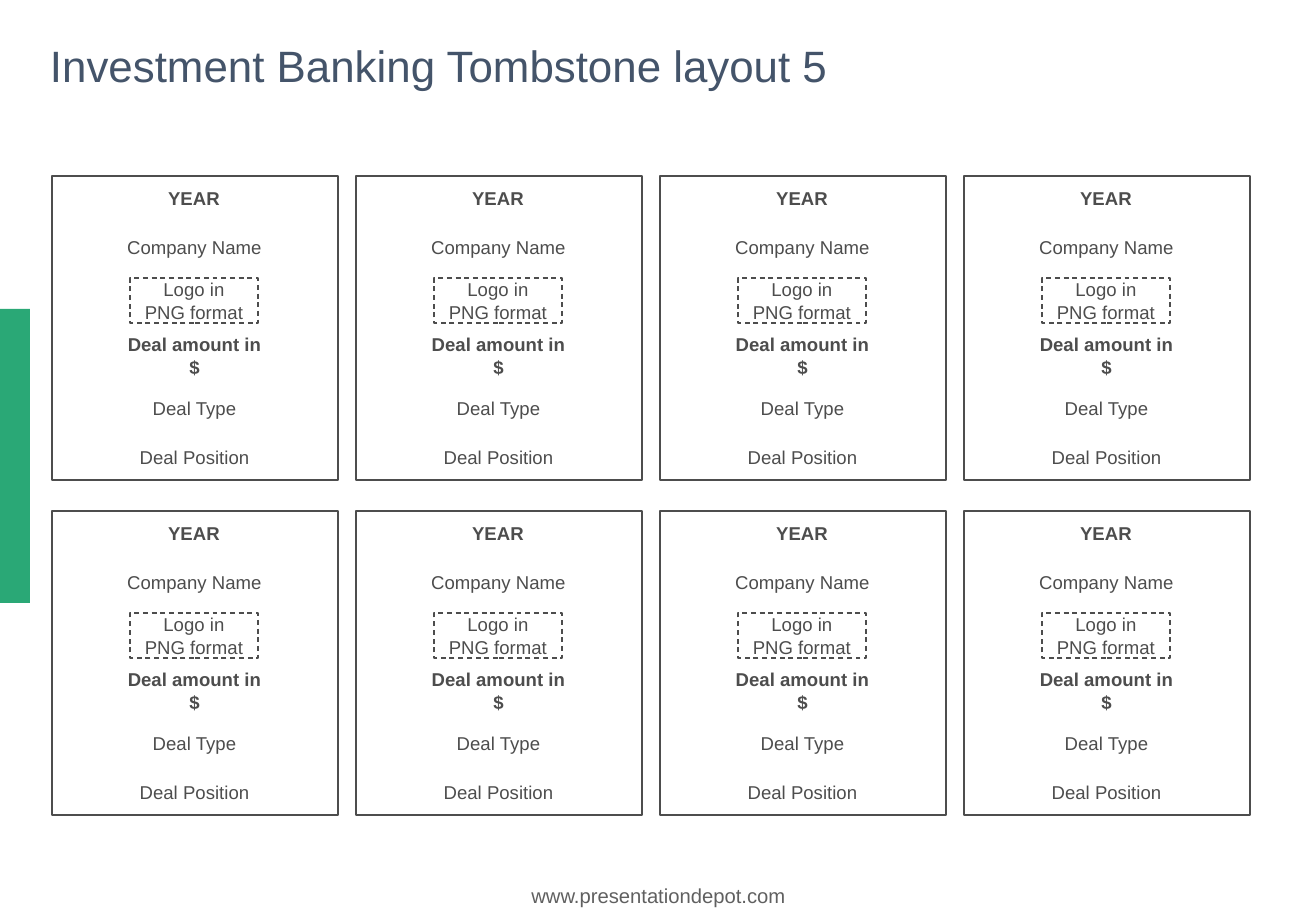
"""Build a slide with a grid of investment banking tombstones."""
import itertools
from dataclasses import dataclass

import pptx
import pptx.dml.color
import pptx.enum.dml
import pptx.enum.shapes
import pptx.enum.text
import pptx.shapes.base
import pptx.shapes.autoshape
import pptx.shapes.shapetree
import pptx.util

EMU_PER_PX = 7526
FONT = "Arial"
COLORS = {"title": "44546A", "card": "4D4D4D", "accent": "2AA876", "footer": "606060"}

COLUMNS, ROWS = 4, 2
CARD_LEFT, CARD_TOP = 52, 176
CARD_WIDTH, CARD_HEIGHT = 286, 304
COLUMN_STEP, ROW_STEP = 304, 335
CARD_AXIS = 142

ALIGN = pptx.enum.text.PP_ALIGN
AUTO_SIZE = pptx.enum.text.MSO_AUTO_SIZE


@dataclass(frozen=True)
class Box:
    left: int
    top: int
    width: int
    height: int

    def emu(self) -> list[int]:
        return [side * EMU_PER_PX for side in (self.left, self.top, self.width, self.height)]


@dataclass(frozen=True)
class DealLine:
    text: str
    top: int
    width: int
    height: int = 23
    bold: bool = False
    framed: bool = False


DEAL_LINES = (
    DealLine("YEAR", 11, 52, bold=True),
    DealLine("Company Name", 60, 135),
    DealLine("Logo in\vPNG format", 102, 128, height=45, framed=True),
    DealLine("Deal amount in $", 168, 149, bold=True),
    DealLine("Deal Type", 221, 85),
    DealLine("Deal Position", 270, 111),
)


def rgb(name: str) -> pptx.dml.color.RGBColor:
    return pptx.dml.color.RGBColor.from_string(COLORS[name])


def write(part: pptx.shapes.autoshape.Shape, text: str, size: int, color: str,
          align: ALIGN = ALIGN.CENTER, bold: bool = False, wrap: bool = True,
          auto_size: AUTO_SIZE = AUTO_SIZE.SHAPE_TO_FIT_TEXT) -> None:
    frame = part.text_frame
    frame.text = text
    frame.margin_left = frame.margin_top = frame.margin_right = frame.margin_bottom = 0
    frame.vertical_anchor = pptx.enum.text.MSO_ANCHOR.MIDDLE
    frame.word_wrap = wrap
    frame.auto_size = auto_size
    paragraph = frame.paragraphs[0]
    paragraph.alignment = align
    for run in paragraph.runs:
        run.font.name = FONT
        run.font.size = pptx.util.Pt(size)
        run.font.bold = bold
        run.font.color.rgb = rgb(color)


def add_rectangle(shapes: pptx.shapes.shapetree.GroupShapes, box: Box,
                  ) -> pptx.shapes.autoshape.Shape:
    rectangle = shapes.add_shape(pptx.enum.shapes.MSO_SHAPE.RECTANGLE, *box.emu())
    rectangle.shadow.inherit = False
    return rectangle


def add_frame(shapes: pptx.shapes.shapetree.GroupShapes, box: Box, weight: float,
              ) -> pptx.shapes.autoshape.Shape:
    frame = add_rectangle(shapes, box)
    frame.fill.background()
    frame.line.color.rgb = rgb("card")
    frame.line.width = pptx.util.Pt(weight)
    return frame


def add_tombstone(shapes: pptx.shapes.shapetree.SlideShapes, left: int, top: int) -> None:
    tombstone = shapes.add_group_shape().shapes
    add_frame(tombstone, Box(left, top, CARD_WIDTH, CARD_HEIGHT), 1.5)
    for line in DEAL_LINES:
        box = Box(left + CARD_AXIS - line.width // 2, top + line.top, line.width, line.height)
        if line.framed:
            entry = add_frame(tombstone, box, 0.75)
            entry.line.dash_style = pptx.enum.dml.MSO_LINE.DASH
        else:
            entry = tombstone.add_textbox(*box.emu())
        write(entry, line.text, 11, "card", bold=line.bold, wrap=line.framed)


def main() -> None:
    deck = pptx.Presentation()
    deck.slide_width = 1316 * EMU_PER_PX
    deck.slide_height = 911 * EMU_PER_PX
    shapes = deck.slides.add_slide(deck.slide_layouts[6]).shapes

    accent = add_rectangle(shapes, Box(0, 309, 30, 294))
    accent.fill.solid()
    accent.fill.fore_color.rgb = rgb("accent")
    accent.line.fill.background()

    title = shapes.add_textbox(*Box(50, 39, 1198, 53).emu())
    write(title, "Investment Banking Tombstone layout 5", 26, "title", align=ALIGN.LEFT)

    for row, column in itertools.product(range(ROWS), range(COLUMNS)):
        add_tombstone(shapes, CARD_LEFT + column * COLUMN_STEP, CARD_TOP + row * ROW_STEP)

    footer = shapes.add_textbox(*Box(413, 883, 491, 24).emu())
    write(footer, "www.presentationdepot.com", 12, "footer", auto_size=AUTO_SIZE.NONE)

    deck.save("out.pptx")


if __name__ == "__main__":
    main()
